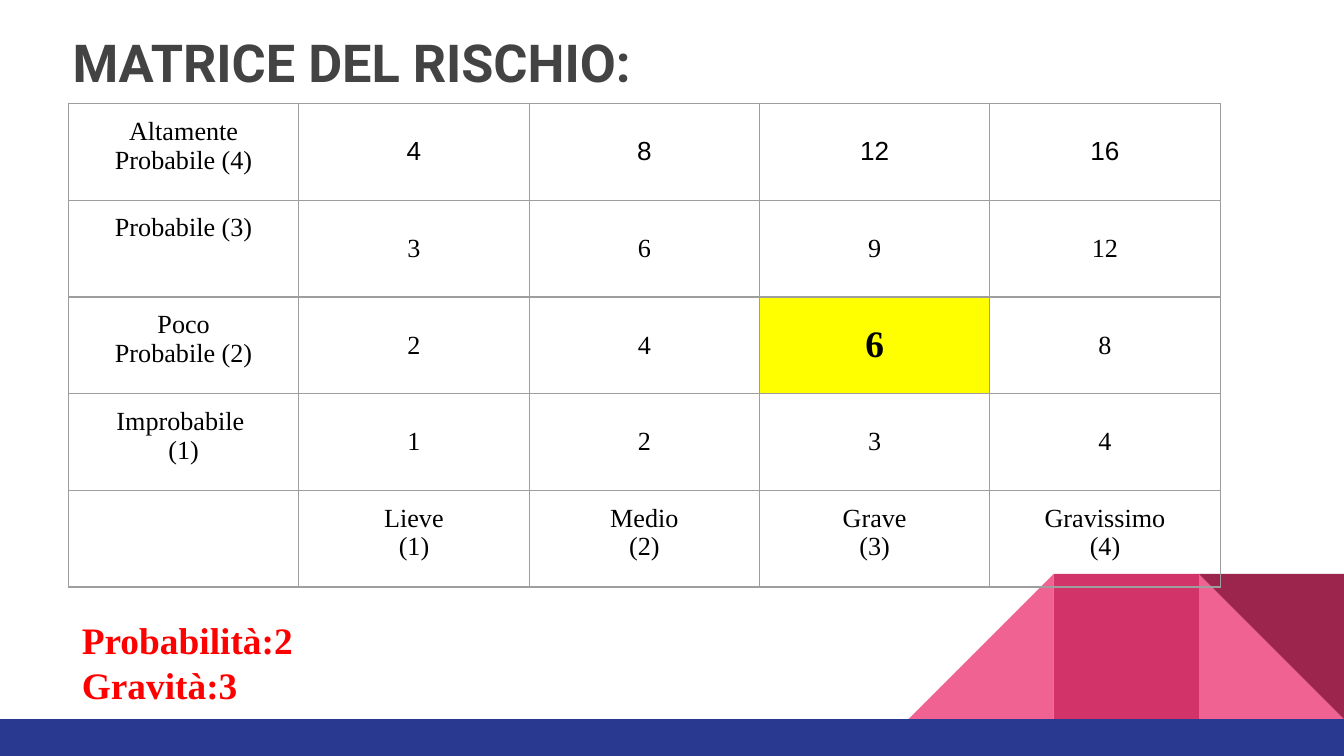
from lxml import etree
from pptx import Presentation
from pptx.dml.color import RGBColor
from pptx.enum.shapes import MSO_SHAPE
from pptx.enum.text import MSO_ANCHOR, PP_ALIGN
from pptx.oxml.ns import qn
from pptx.util import Inches, Pt

TRI = MSO_SHAPE.RIGHT_TRIANGLE
RECT = MSO_SHAPE.RECTANGLE
MID, TOP = MSO_ANCHOR.MIDDLE, MSO_ANCHOR.TOP
LEFT, CENTER = PP_ALIGN.LEFT, PP_ALIGN.CENTER
MARGIN = Inches(0.1)
SERIF = "Times New Roman"
HUES = {"pink": "F06292", "rose": "D23369", "wine": "9C254D", "blue": "2A3990",
        "title": "434343", "red": "FF0000", "black": "000000",
        "mark": "FFFF00", "grid": "9E9E9E"}


def style(frame, size, font, hue, bold=False, align=LEFT):
    for para in frame.paragraphs:
        para.alignment = align
        for run in para.runs:
            run.font.size = Pt(size)
            run.font.name = font
            run.font.bold = bold
            run.font.color.rgb = RGBColor.from_string(HUES[hue])


def outline(cell):
    props = cell._tc.get_or_add_tcPr()
    for side in ("lnL", "lnR", "lnT", "lnB"):
        line = etree.SubElement(props, qn("a:" + side), w=str(Pt(0.75)))
        fill = etree.SubElement(line, qn("a:solidFill"))
        etree.SubElement(fill, qn("a:srgbClr"), val=HUES["grid"])


prs = Presentation()
prs.slide_width = Inches(10)
prs.slide_height = Inches(10 * 9 / 16)
slide = prs.slides.add_slide(prs.slide_layouts[5])
shapes = slide.shapes

side = 1.08
decor = [
    (TRI, 8.92, 4.27, side, side, 0, "pink"),
    (TRI, 6.76, 4.27, side, side, 270, "pink"),
    (RECT, 7.84, 4.27, side, side, 0, "rose"),
    (TRI, 8.92, 4.27, side, side, 180, "wine"),
    (RECT, 0, 5.35, 10, 0.28, 0, "blue"),
]
for kind, left, top, width, height, turn, hue in decor:
    part = shapes.add_shape(kind, Inches(left), Inches(top), Inches(width), Inches(height))
    part.rotation = turn
    part.shadow.inherit = False
    part.fill.solid()
    part.fill.fore_color.rgb = RGBColor.from_string(HUES[hue])
    part.line.fill.background()

title = shapes.title
title.left, title.top = Inches(0.44), Inches(0)
title.width, title.height = Inches(7.32), Inches(0.92)
title.text_frame.text = "MATRICE DEL RISCHIO:"
title.text_frame.vertical_anchor = MID
style(title.text_frame, 28, "Roboto", "title", True)

score = shapes.add_textbox(Inches(0.51), Inches(4.49), Inches(3.59), Inches(1))
score.text_frame.text = "Probabilità:2\nGravità:3"
score.text_frame.word_wrap = True
style(score.text_frame, 20, SERIF, "red", True)

for frame in (title.text_frame, score.text_frame):
    frame.margin_left = frame.margin_right = MARGIN
    frame.margin_top = frame.margin_bottom = MARGIN

odds = ["Altamente\nProbabile (4)", "Probabile (3)", "Poco\nProbabile (2)", "Improbabile \n(1)"]
harm = ["Lieve\n(1)", "Medio\n(2)", "Grave\n(3)", "Gravissimo\n(4)"]
rows = [[name] + [str((4 - i) * j) for j in range(1, 5)] for i, name in enumerate(odds)]
rows.append([""] + harm)

table = shapes.add_table(5, 5, Inches(0.51), Inches(0.77), Inches(8.57), Inches(3.6)).table
table.first_row = table.horz_banding = False
for col in table.columns:
    col.width = Inches(8.57 / 5)
for row in table.rows:
    row.height = Inches(0.72)

for i, row in enumerate(rows):
    for j, text in enumerate(row):
        cell = table.cell(i, j)
        value = i < 4 and j > 0
        risk = (i, j) == (2, 3)
        cell.text_frame.text = text
        cell.vertical_anchor = MID if value else TOP
        cell.margin_left = cell.margin_right = MARGIN
        cell.margin_top = cell.margin_bottom = MARGIN
        font = "Arial" if value and i == 0 else SERIF
        style(cell.text_frame, 20 if risk else 14, font, "black", risk, CENTER)
        outline(cell)
        if risk:
            cell.fill.solid()
            cell.fill.fore_color.rgb = RGBColor.from_string(HUES["mark"])
        else:
            cell.fill.background()

prs.save("out.pptx")
